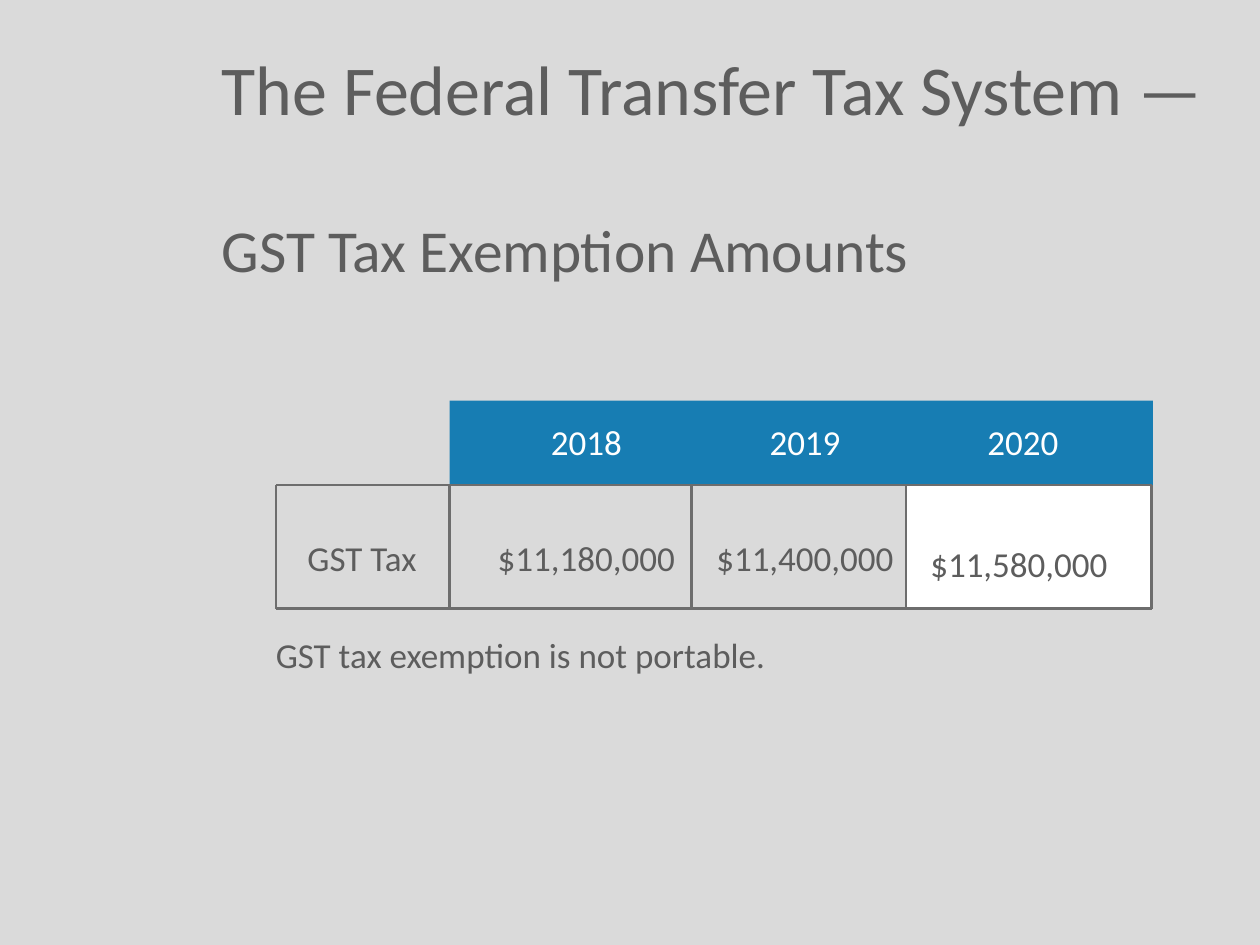
from dataclasses import dataclass

from lxml import etree
from pptx import Presentation
from pptx import util as u
from pptx.dml.color import RGBColor
from pptx.enum import shapes, text
from pptx.oxml.ns import qn

COLORS = {
    "background": "DADADA",
    "header": "177DB3",
    "white": "FFFFFF",
    "text": "5D5D5D",
    "outline": "6B6B6B",
    "rule": "6D6D6D",
}
FONT = "Calibri"
BODY_SIZE = 20


@dataclass
class Panel:
    left: float
    top: float
    right: float
    bottom: float
    fill: str
    outline: str = ""


@dataclass
class Rule:
    x1: float
    y1: float
    x2: float
    y2: float


COLUMN_EDGES = [157.7, 257, 395.3, 517.7, 658.1]
ROW_TOP, ROW_BOTTOM = 277.2, 347.8
PANELS = [
    Panel(517.7, ROW_TOP, 658.1, ROW_BOTTOM, "white", "outline"),
    Panel(257, 229, 658.8, ROW_TOP, "header"),
]
RULES = [Rule(x, ROW_TOP, x, ROW_BOTTOM) for x in COLUMN_EDGES] + [
    Rule(COLUMN_EDGES[0], y, COLUMN_EDGES[-1], y) for y in (ROW_TOP, ROW_BOTTOM)
]
COLUMN_WIDTHS = [104.4, 124.5, 125.3, 123.8]
ROW_HEIGHTS = [43.9, 88.6]
EXEMPTIONS = [
    ["", "2018", "2019", "2020"],
    ["GST Tax", "$11,180,000", "$11,400,000", "$11,580,000 "],
]


def color(name: str) -> RGBColor:
    return RGBColor.from_string(COLORS[name])


def format_paragraph(paragraph, size: float, color_name: str, alignment=text.PP_ALIGN.LEFT) -> None:
    paragraph.alignment = alignment
    paragraph.font.name = FONT
    paragraph.font.size = u.Pt(size)
    paragraph.font.color.rgb = color(color_name)


def place(shape, left: float, top: float, width: float, height: float) -> None:
    shape.left, shape.top = u.Pt(left), u.Pt(top)
    shape.width, shape.height = u.Pt(width), u.Pt(height)


def draw_panel(slide, panel: Panel) -> None:
    shape = slide.shapes.add_shape(
        shapes.MSO_SHAPE.RECTANGLE, u.Pt(panel.left), u.Pt(panel.top),
        u.Pt(panel.right - panel.left), u.Pt(panel.bottom - panel.top))
    shape.shadow.inherit = False
    shape.fill.solid()
    shape.fill.fore_color.rgb = color(panel.fill)
    if panel.outline:
        shape.line.color.rgb = color(panel.outline)
        shape.line.width = u.Pt(0.75)
    else:
        shape.line.fill.background()


def draw_rule(slide, rule: Rule) -> None:
    connector = slide.shapes.add_connector(
        shapes.MSO_CONNECTOR.STRAIGHT,
        u.Pt(rule.x1), u.Pt(rule.y1), u.Pt(rule.x2), u.Pt(rule.y2))
    connector.line.color.rgb = color("rule")
    connector.line.width = u.Pt(1.5)
    etree.SubElement(connector.element.spPr, qn("a:effectLst"))


def write_title(slide) -> None:
    title = slide.shapes.title
    place(title, 119.5, 44.6, 575.3, 95.8)
    frame = title.text_frame
    frame.word_wrap = True
    frame.auto_size = text.MSO_AUTO_SIZE.NONE
    frame.vertical_anchor = text.MSO_ANCHOR.MIDDLE
    frame.margin_top = u.Pt(7.2)
    frame.text = "The Federal Transfer Tax System —\nGST Tax Exemption Amounts"
    heading, subheading = frame.paragraphs
    format_paragraph(heading, 40, "text")
    format_paragraph(subheading, 34, "text")
    subheading.space_before = u.Pt(48)


def clear_cell(cell) -> None:
    properties = cell._tc.get_or_add_tcPr()
    for side in ("lnL", "lnR", "lnT", "lnB"):
        border = etree.SubElement(properties, qn(f"a:{side}"))
        etree.SubElement(border, qn("a:noFill"))
    cell.fill.background()


def draw_table(slide) -> None:
    table = slide.shapes.add_table(
        len(ROW_HEIGHTS), len(COLUMN_WIDTHS), u.Pt(168.5), u.Pt(231.8),
        u.Pt(sum(COLUMN_WIDTHS)), u.Pt(sum(ROW_HEIGHTS))).table
    table.first_row = table.horz_banding = False
    for column, width in zip(table.columns, COLUMN_WIDTHS):
        column.width = u.Pt(width)
    for row, height, values in zip(table.rows, ROW_HEIGHTS, EXEMPTIONS):
        row.height = u.Pt(height)
        is_header = values is EXEMPTIONS[0]
        for index, (cell, value) in enumerate(zip(row.cells, values)):
            clear_cell(cell)
            cell.vertical_anchor = text.MSO_ANCHOR.MIDDLE
            cell.text = value
            format_paragraph(
                cell.text_frame.paragraphs[0], BODY_SIZE,
                "white" if is_header else "text",
                text.PP_ALIGN.CENTER if index else text.PP_ALIGN.LEFT)
    table.cell(1, 3).margin_top = u.Pt(10.4)


def write_note(slide) -> None:
    note = slide.shapes.add_textbox(u.Pt(150.5), u.Pt(358.5), u.Pt(414), u.Pt(31.7))
    note.text_frame.word_wrap = True
    note.text_frame.text = "GST tax exemption is not portable."
    format_paragraph(note.text_frame.paragraphs[0], BODY_SIZE, "text")


def main() -> None:
    presentation = Presentation()
    presentation.slide_width, presentation.slide_height = u.Pt(720), u.Pt(540)
    slide = presentation.slides.add_slide(presentation.slide_layouts[5])
    slide.background.fill.solid()
    slide.background.fill.fore_color.rgb = color("background")
    for panel in PANELS:
        draw_panel(slide, panel)
    write_title(slide)
    draw_table(slide)
    write_note(slide)
    for rule in RULES:
        draw_rule(slide, rule)
    presentation.save("out.pptx")


if __name__ == "__main__":
    main()
